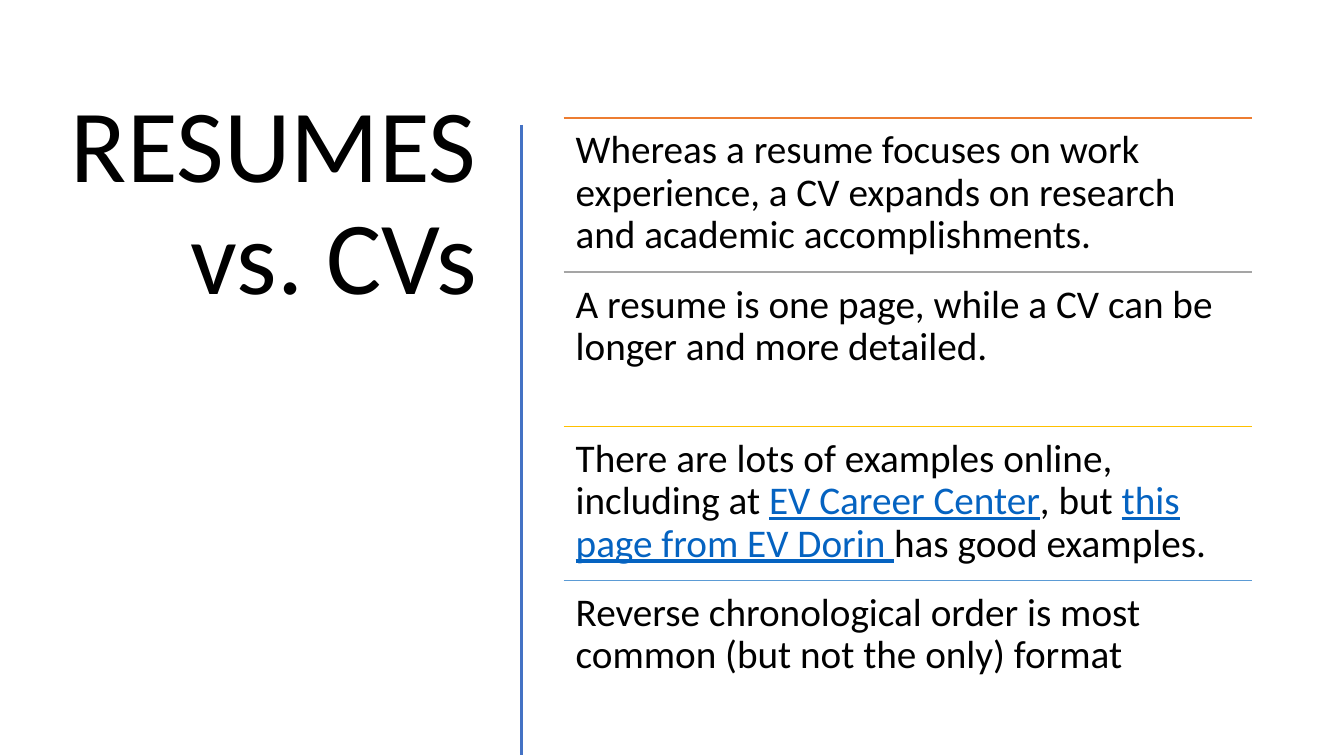
from dataclasses import dataclass

from pptx import Presentation
from pptx import util as u
from pptx.dml import color
from pptx.enum import shapes, text
from pptx.oxml import ns

PX = 9144


@dataclass(frozen=True)
class Theme:
    font: str = "Calibri"
    ink: str = "000000"
    link: str = "0563C1"
    divider: str = "4472C4"
    rules: tuple[str, ...] = ("ED7D31", "A5A5A5", "FFC000", "5B9BD5")
    title_size: int = 74
    body_size: int = 28
    line_spacing: float = 0.9


@dataclass(frozen=True)
class Span:
    words: str
    linked: bool = False


@dataclass(frozen=True)
class Point:
    spans: tuple[Span, ...]


@dataclass(frozen=True)
class Area:
    left: int
    top: int
    width: int
    height: int


THEME = Theme()
TITLE_AREA = Area(52, 56, 431, 295)
FIRST_POINT = Area(559, 117, 683, 153)
INSET = 12

POINTS = (
    Point((Span(
        "Whereas a resume focuses on work experience, a CV expands on "
        "research and academic accomplishments."),)),
    Point((Span(
        "A resume is one page, while a CV can be longer and more detailed."),)),
    Point((
        Span("There are lots of examples online, including at "),
        Span("EV Career Center", linked=True),
        Span(", but "),
        Span("this page from EV Dorin ", linked=True),
        Span("has good examples."),
    )),
    Point((Span(
        "Reverse chronological order is most common (but not the only) format"),)),
)


def apply_format(target, values: dict) -> None:
    for name, value in values.items():
        setattr(target, name, value)


def place(box, area: Area) -> None:
    apply_format(box, {
        "left": area.left * PX, "top": area.top * PX,
        "width": area.width * PX, "height": area.height * PX,
    })


def add_span(para, span: Span, size: int) -> None:
    run = para.add_run()
    run.text = span.words
    apply_format(run.font, {
        "name": THEME.font, "size": u.Pt(size),
        "bold": False, "underline": span.linked,
    })
    run.font.color.rgb = color.RGBColor.from_string(
        THEME.link if span.linked else THEME.ink)


def add_rule(page, start: tuple[int, int], end: tuple[int, int],
             rgb: str, weight: int) -> None:
    rule = page.shapes.add_connector(
        shapes.MSO_CONNECTOR.STRAIGHT,
        *(value * PX for value in start + end))
    rule.line.color.rgb = color.RGBColor.from_string(rgb)
    rule.line.width = u.Pt(weight)
    properties = rule._element.spPr
    properties.append(properties.makeelement(ns.qn("a:effectLst"), {}))


def add_title(page) -> None:
    title = page.shapes.title
    place(title, TITLE_AREA)
    apply_format(title.text_frame, {
        "word_wrap": True,
        "auto_size": text.MSO_AUTO_SIZE.NONE,
        "vertical_anchor": text.MSO_ANCHOR.MIDDLE,
    })
    para = title.text_frame.paragraphs[0]
    apply_format(para, {
        "alignment": text.PP_ALIGN.RIGHT, "line_spacing": THEME.line_spacing,
    })
    add_span(para, Span("RESUMES vs. CVs"), THEME.title_size)


def add_point(page, point: Point, area: Area, rule_color: str) -> None:
    add_rule(page, (area.left, area.top), (area.left + area.width, area.top),
             rule_color, 1)
    box = page.shapes.add_textbox(0, 0, 0, 0)
    place(box, area)
    apply_format(box.text_frame, {
        "word_wrap": True,
        "vertical_anchor": text.MSO_ANCHOR.TOP,
        **{f"margin_{side}": INSET * PX
           for side in ("left", "top", "right", "bottom")},
    })
    para = box.text_frame.paragraphs[0]
    apply_format(para, {
        "alignment": text.PP_ALIGN.LEFT, "line_spacing": THEME.line_spacing,
    })
    for span in point.spans:
        add_span(para, span, THEME.body_size)


def main() -> None:
    deck = Presentation()
    apply_format(deck, {"slide_width": 1333 * PX, "slide_height": 750 * PX})
    page = deck.slides.add_slide(deck.slide_layouts.get_by_name("Title Only"))
    add_title(page)
    add_rule(page, (517, 124), (517, 749), THEME.divider, 2)
    for index, (point, rule_color) in enumerate(zip(POINTS, THEME.rules)):
        top = FIRST_POINT.top + index * FIRST_POINT.height
        area = Area(FIRST_POINT.left, top, FIRST_POINT.width, FIRST_POINT.height)
        add_point(page, point, area, rule_color)
    deck.save("out.pptx")


if __name__ == "__main__":
    main()
